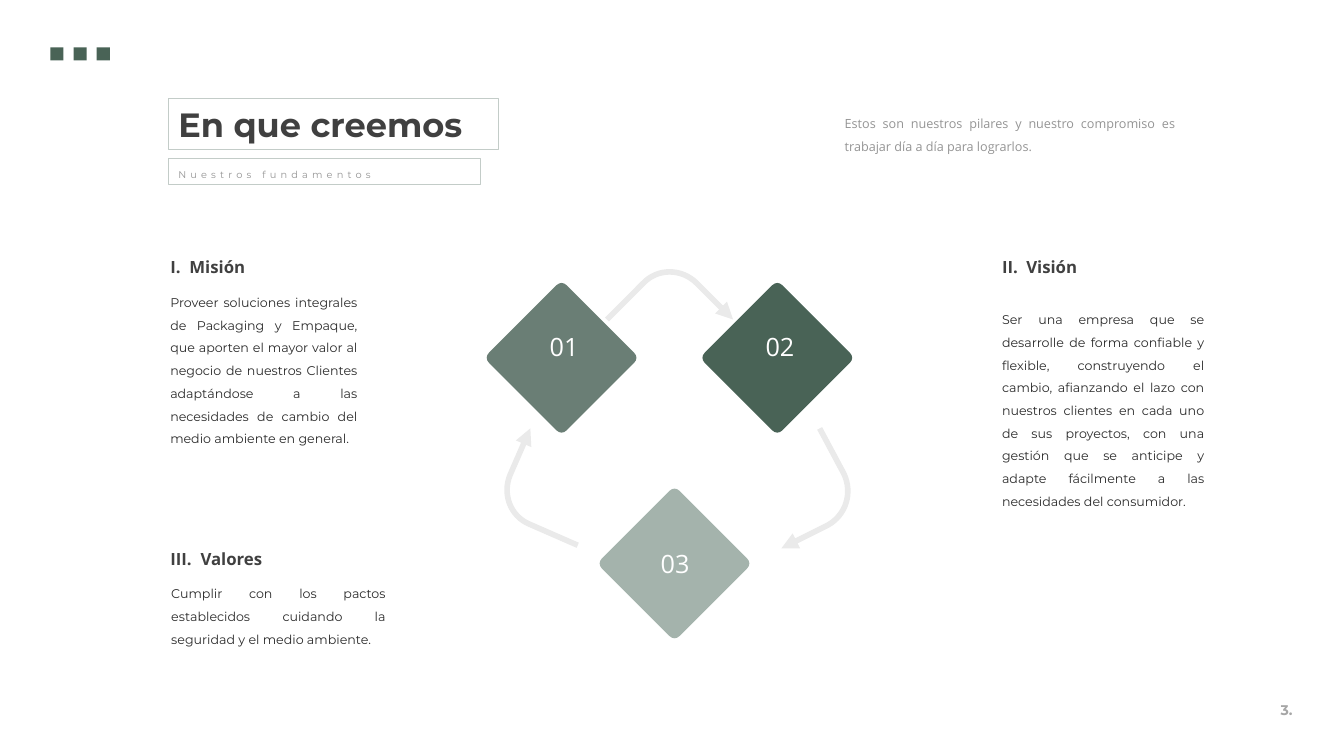
import pptx
import pptx.dml.color
import pptx.enum.shapes
import pptx.enum.text
import pptx.oxml
import pptx.oxml.ns
import pptx.util
from dataclasses import dataclass

Inches = pptx.util.Inches
ALIGN = pptx.enum.text.PP_ALIGN


@dataclass(frozen=True)
class Theme:
    display: str = "Montserrat"
    text: str = "Open Sans"
    dark_green: str = "496356"
    mid_green: str = "6A7E75"
    light_green: str = "A4B3AC"
    frame: str = "C3CCC8"
    arrow: str = "EAEAEA"
    heading: str = "404040"
    body: str = "2B2B2B"
    muted: str = "959595"
    page: str = "A6A6A6"
    white: str = "FFFFFF"
    title_size: int = 24
    number_size: int = 18
    heading_size: int = 12
    page_size: int = 10
    body_size: int = 9
    subtitle_size: int = 7


def rgb(color):
    return pptx.dml.color.RGBColor.from_string(color)


def add_xml(parent, tag, **attributes):
    child = pptx.oxml.parse_xml(f"<a:{tag} {pptx.oxml.ns.nsdecls('a')}/>")
    for name, value in attributes.items():
        child.set(name, str(value))
    parent.append(child)
    return child


def write_text(frame, text, font, size, color, bold=False, align=ALIGN.LEFT,
               line_spacing=None, letter_spacing=None, tab=None, wrap=True):
    """Fill a text frame with one formatted paragraph."""
    frame.word_wrap = wrap
    frame.auto_size = pptx.enum.text.MSO_AUTO_SIZE.SHAPE_TO_FIT_TEXT
    frame.vertical_anchor = pptx.enum.text.MSO_ANCHOR.TOP
    paragraph = frame.paragraphs[0]
    paragraph.alignment = align
    if line_spacing:
        paragraph.line_spacing = line_spacing
    if tab:
        stops = add_xml(paragraph._p.get_or_add_pPr(), "tabLst")
        add_xml(stops, "tab", pos=int(Inches(tab)), algn="l")
    run = paragraph.add_run()
    run.text = text
    run.font.name = font
    run.font.size = pptx.util.Pt(size)
    run.font.bold = bold
    run.font.color.rgb = rgb(color)
    if letter_spacing:
        run._r.get_or_add_rPr().set("spc", str(letter_spacing * 100))


class SlideBuilder:
    def __init__(self, slide, theme):
        self.shapes = slide.shapes
        self.theme = theme

    def text(self, box, text, **style):
        area = self.shapes.add_textbox(*map(Inches, box))
        write_text(area.text_frame, text, **style)

    def paint(self, shape, fill=None, line=None, width=0.75):
        shape.shadow.inherit = False
        if fill:
            shape.fill.solid()
            shape.fill.fore_color.rgb = rgb(fill)
        else:
            shape.fill.background()
        if line:
            shape.line.color.rgb = rgb(line)
            shape.line.width = pptx.util.Pt(width)
        else:
            shape.line.fill.background()

    def rectangle(self, box, **look):
        shape = self.shapes.add_shape(
            pptx.enum.shapes.MSO_SHAPE.RECTANGLE, *map(Inches, box))
        self.paint(shape, **look)
        return shape

    def framed_text(self, box, text, **style):
        frame = self.rectangle(box, line=self.theme.frame)
        write_text(frame.text_frame, text, **style)

    def outline(self, start, segments, close):
        """Draw segments of one point (line) or three points (curve)."""
        builder = self.shapes.build_freeform(*map(Inches, start))
        builder.add_line_segments(
            [tuple(map(Inches, point)) for segment in segments for point in segment],
            close=close)
        shape = builder.convert_to_shape()
        steps = iter(shape._element.findall(".//" + pptx.oxml.ns.qn("a:lnTo")))
        for segment in segments:
            group = [next(steps) for _ in segment]
            if len(group) == 3:
                curve = add_xml(group[0].getparent(), "cubicBezTo")
                group[0].addprevious(curve)
                for step in group:
                    curve.append(step[0])
                    step.getparent().remove(step)
        return shape

    def diamond(self, center_x, center_y, color):
        corner = [(-0.05, -0.72), (-0.02, -0.75), (0.02, -0.75), (0.05, -0.72)]
        corners = []
        for _ in range(4):
            corners.append([(center_x + x, center_y + y) for x, y in corner])
            corner = [(-y, x) for x, y in corner]
        segments = []
        for entry, *curve in corners:
            segments += [[entry], curve]
        self.paint(self.outline(corners[0][0], segments[1:], close=True), fill=color)

    def cycle_arrow(self, start, bend_start, control_1, control_2, bend_end, end):
        arrow = self.outline(
            start, [[bend_start], [control_1, control_2, bend_end], [end]], close=False)
        self.paint(arrow, line=self.theme.arrow, width=4)
        add_xml(arrow.line._get_or_add_ln(), "tailEnd", type="triangle")


def main():
    deck = pptx.Presentation()
    deck.slide_width, deck.slide_height = Inches(13.33), Inches(7.5)
    theme = Theme()
    page = SlideBuilder(deck.slides.add_slide(deck.slide_layouts[6]), theme)

    # Page number and corner squares
    page.text((12.54, 6.91, 0.44, 0.27), "3.", font=theme.display, bold=True,
              size=theme.page_size, color=theme.page, align=ALIGN.CENTER, wrap=False)
    for index in range(3):
        page.rectangle((0.5 + 0.23 * index, 0.47, 0.13, 0.13), fill=theme.dark_green)

    # Title, subtitle and introduction
    page.framed_text((1.67, 0.98, 3.27, 0.5), "En que creemos", font=theme.display,
                     size=theme.title_size, color=theme.heading, bold=True)
    page.framed_text((1.67, 1.57, 3.1, 0.26), "Nuestros fundamentos",
                     font=theme.display, size=theme.subtitle_size,
                     color=theme.muted, line_spacing=1.5, letter_spacing=3)
    page.text((8.28, 1.03, 3.47, 0.56),
              "Estos son nuestros pilares y nuestro compromiso es trabajar día a día "
              "para lograrlos.",
              font=theme.text, size=theme.body_size, color=theme.muted,
              align=ALIGN.JUSTIFY, line_spacing=1.5)

    # Arrows of the cycle
    for route in (
        [(5.73, 5.41), (5.25, 5.2), (5.06, 5.12), (4.98, 4.9), (5.06, 4.71), (5.26, 4.25)],
        [(8.13, 4.25), (8.37, 4.7), (8.46, 4.89), (8.39, 5.11), (8.21, 5.21), (7.75, 5.44)],
        [(6.02, 3.17), (6.38, 2.81), (6.52, 2.66), (6.76, 2.66), (6.91, 2.81), (7.27, 3.17)],
    ):
        page.cycle_arrow(*route)

    # Numbered diamonds
    for number, x, y, color, number_box in (
        ("01", 5.57, 3.55, theme.mid_green, (5.35, 3.24, 0.49, 0.4)),
        ("02", 7.71, 3.55, theme.dark_green, (7.49, 3.24, 0.49, 0.4)),
        ("03", 6.69, 5.59, theme.light_green, (6.45, 5.39, 0.49, 0.4)),
    ):
        page.diamond(x, y, color)
        page.text(number_box, number, font=theme.text, size=theme.number_size,
                  color=theme.white, align=ALIGN.CENTER, wrap=False)

    # Pillars: heading with its numeral, then the statement
    for heading, heading_at, tab, statement_box, statement in (
        ("I.\tMisión", (1.59, 2.4), 0.19, (1.59, 2.8, 2.05, 1.69),
         "Proveer soluciones integrales de Packaging y Empaque, que aporten el mayor "
         "valor al negocio de nuestros Clientes adaptándose a las necesidades de "
         "cambio del medio ambiente en general."),
        ("II.\tVisión", (9.84, 2.4), 0.24, (9.84, 2.97, 2.2, 2.15),
         "Ser una empresa que se desarrolle de forma confiable y flexible, "
         "construyendo el cambio, afianzando el lazo con nuestros clientes en cada "
         "uno de sus proyectos, con una gestión que se anticipe y adapte fácilmente "
         "a las necesidades del consumidor."),
        ("III.\tValores", (1.59, 5.29), 0.3, (1.6, 5.69, 2.32, 0.78),
         "Cumplir con los pactos establecidos cuidando la seguridad y el medio "
         "ambiente."),
    ):
        page.text((*heading_at, 1.85, 0.37), heading, font=theme.text, bold=True,
                  size=theme.heading_size, color=theme.heading, line_spacing=1.5, tab=tab)
        page.text(statement_box, statement, font=theme.display, size=theme.body_size,
                  color=theme.body, align=ALIGN.JUSTIFY, line_spacing=1.5)

    deck.save("out.pptx")


if __name__ == "__main__":
    main()
